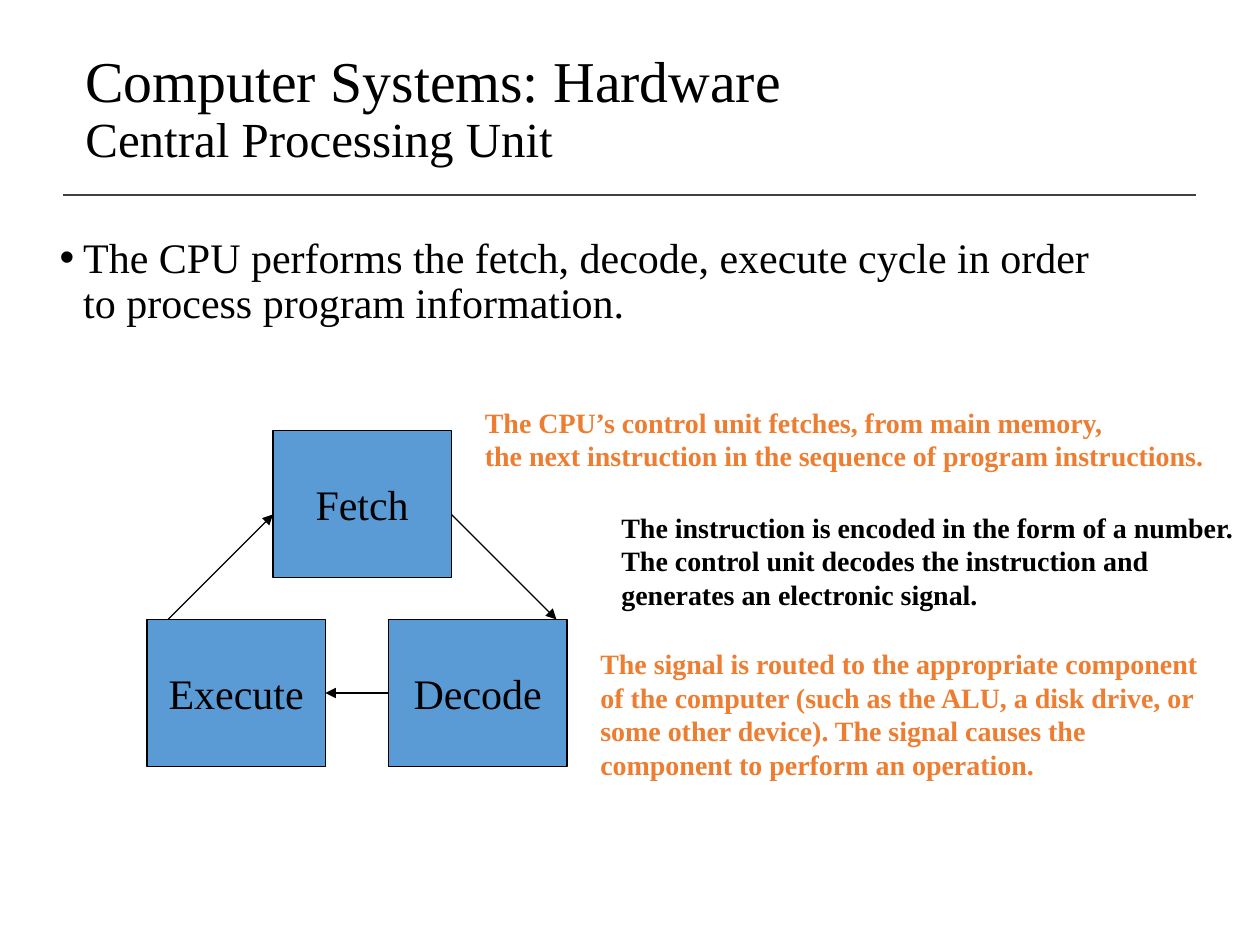
from lxml import etree
from pptx import Presentation
from pptx.dml.color import RGBColor
from pptx.enum import shapes, text
from pptx.oxml.ns import qn
from pptx.util import Pt

FONT = "Times New Roman"
COLORS = {"ink": "000000", "rule": "404040", "box": "5B9BD5", "note": "ED7D31"}

TITLE = [("Computer Systems: Hardware", 33), ("Central Processing Unit", 28)]
POINT = [("The CPU performs the fetch, decode, execute cycle "
          "in order to process program information.", 24)]

# name: left, top
STEPS = {"Fetch": (156, 246), "Decode": (222, 354), "Execute": (84, 354)}
STEP_W, STEP_H = 102, 84

# left, top, width, height, color, lines
NOTES = [
    (270, 228, 450, 46, "note",
     ["The CPU’s control unit fetches, from main memory,",
      "the next instruction in the sequence of program instructions."]),
    (348, 288, 372, 65, "ink",
     ["The instruction is encoded in the form of a number. The control unit "
      "decodes the instruction and generates an electronic signal."]),
    (336, 366, 367, 84, "note",
     ["The signal is routed to the appropriate component of the computer "
      "(such as the ALU, a disk drive, or some other device). The signal "
      "causes the component to perform an operation."]),
]

deck = Presentation()
deck.slide_width, deck.slide_height = Pt(720), Pt(540)
slide = deck.slides.add_slide(deck.slide_layouts[6])


def rgb(name):
    return RGBColor.from_string(COLORS[name])


def write(frame, lines, color="ink", bold=False, **form):
    """Fill one paragraph with (text, size) lines and format it."""
    para = frame.paragraphs[0]
    for i, (words, size) in enumerate(lines):
        if i:
            para.add_line_break()
        run = para.add_run()
        run.text = words
        for key, value in {"name": FONT, "size": Pt(size), "bold": bold}.items():
            setattr(run.font, key, value)
        run.font.color.rgb = rgb(color)
    for key, value in form.items():
        setattr(para, key, value)
    return para


def add_text(left, top, width, height, lines, **form):
    frame = slide.shapes.add_textbox(*map(Pt, (left, top, width, height))).text_frame
    frame.word_wrap = True
    return frame, write(frame, lines, **form)


def add_step(name, left, top):
    box = slide.shapes.add_shape(shapes.MSO_SHAPE.RECTANGLE,
                                 *map(Pt, (left, top, STEP_W, STEP_H)))
    box.shadow.inherit = False
    box.fill.solid()
    box.fill.fore_color.rgb = rgb("box")
    box.line.color.rgb = rgb("ink")
    box.line.width = Pt(0.75)
    frame = box.text_frame
    frame.word_wrap = False
    frame.vertical_anchor = text.MSO_ANCHOR.MIDDLE
    write(frame, [(name, 24)], alignment=text.PP_ALIGN.CENTER)
    return box


def add_line(start, end, color="ink", width=0.75, arrow=True):
    line = slide.shapes.add_connector(shapes.MSO_CONNECTOR.STRAIGHT,
                                      *map(Pt, start + end))
    line.line.color.rgb = rgb(color)
    line.line.width = Pt(width)
    if arrow:
        etree.SubElement(line.line._get_or_add_ln(), qn("a:tailEnd"), type="triangle")
    etree.SubElement(line._element.spPr, qn("a:effectLst"))
    return line


add_line((36, 111.6), (683.28, 111.6), "rule", 1, arrow=False)

frame, para = add_text(41.76, 23.76, 678, 78.5, TITLE, line_spacing=0.9)
frame.vertical_anchor = text.MSO_ANCHOR.MIDDLE

frame, para = add_text(0, 131.76, 653, 360, POINT,
                       line_spacing=0.9, space_before=Pt(3.8))
props = para._p.get_or_add_pPr()
props.set("marL", str(Pt(40.5)))
props.set("indent", str(Pt(-13.5)))
etree.SubElement(props, qn("a:buFont"), typeface="Arial")
etree.SubElement(props, qn("a:buChar"), char="•")

boxes = {name: add_step(name, *spot) for name, spot in STEPS.items()}

for left, top, width, height, color, lines in NOTES:
    add_text(left, top, width, height, [(words, 16) for words in lines],
             color=color, bold=True)

# The slanted arrows leave and meet Fetch a little below its middle
fetch, decode, execute = STEPS.values()
low = fetch[1] + 48
add_line((fetch[0] + STEP_W, low), (decode[0] + 96, decode[1]))
add_line((execute[0] + 12, execute[1]), (fetch[0], low))
mid = decode[1] + STEP_H / 2
back = add_line((decode[0], mid), (execute[0] + STEP_W, mid))
back.begin_connect(boxes["Decode"], 1)
back.end_connect(boxes["Execute"], 3)

deck.save("out.pptx")
